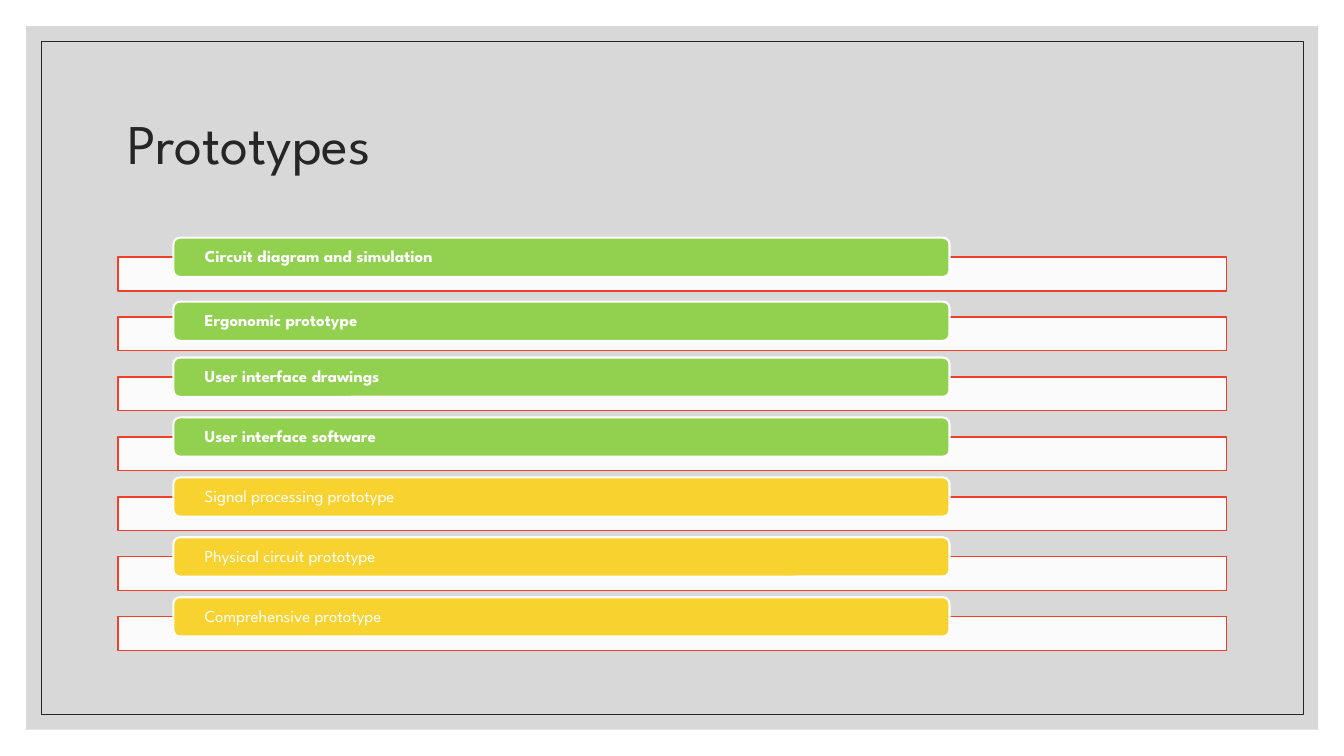
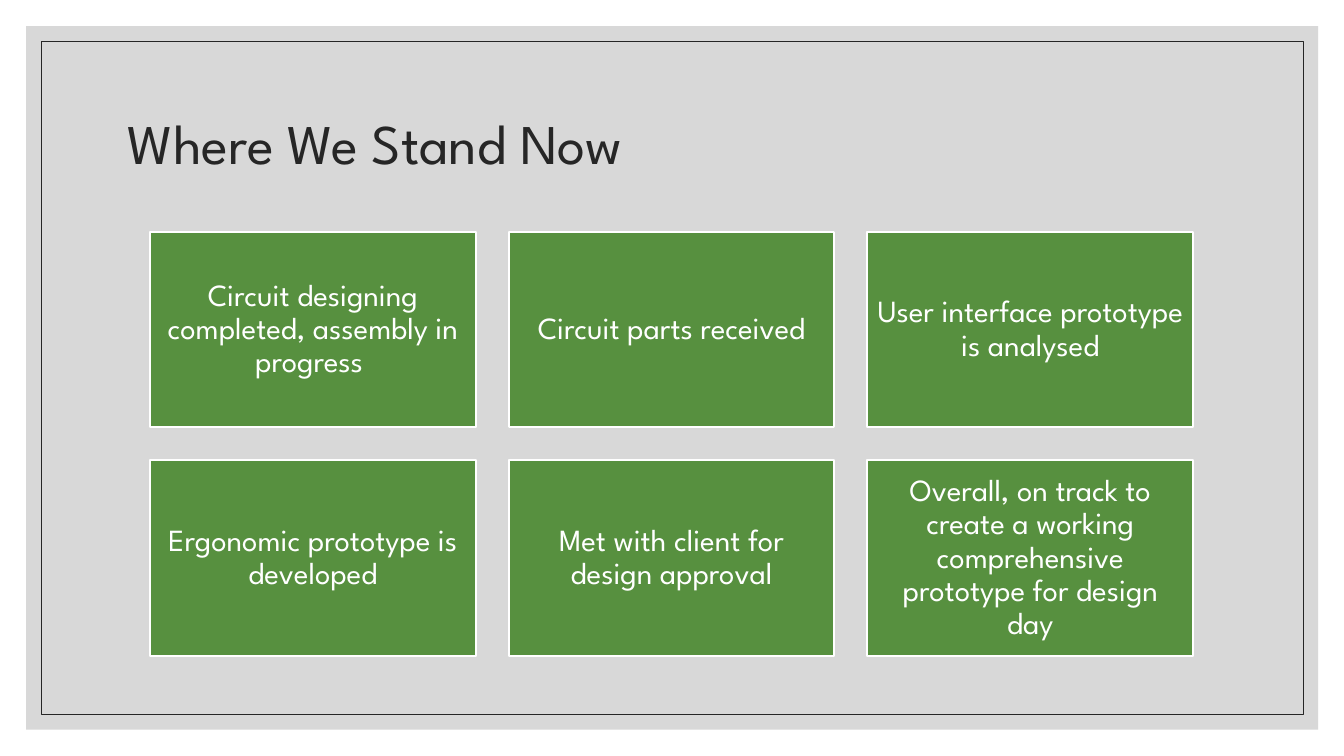
from dataclasses import dataclass

from lxml.etree import SubElement
from pptx import Presentation
from pptx.dml.color import RGBColor as RGB
from pptx.enum.shapes import MSO_SHAPE as Shape
from pptx.enum.text import MSO_ANCHOR as Anchor, PP_ALIGN as Align
from pptx.oxml.ns import qn
from pptx.util import Cm, Pt

STEPS = [
    ("Circuit diagram and simulation", True),
    ("Ergonomic prototype", True),
    ("User interface drawings", True),
    ("User interface software", True),
    ("Signal processing prototype", False),
    ("Physical circuit prototype", False),
    ("Comprehensive prototype", False),
]
NUDGE = {"Ergonomic prototype": 0.1}

TILES = [
    "Circuit designing completed, assembly in progress ",
    "Circuit parts received",
    "User interface prototype is analysed",
    "Ergonomic prototype is developed",
    "Met with client for design approval",
    "Overall, on track to create a working comprehensive prototype for design day",
]


@dataclass(frozen=True)
class Theme:
    font: str = "League Spartan"
    ink: str = "262626"
    white: str = "FFFFFF"
    panel: str = "BFBFBF"
    rail: str = "F03F2B"
    done: str = "92D050"
    todo: str = "F8D22F"
    tile: str = "57903F"
    title_size: int = 40
    step_size: int = 12
    tile_size: int = 22


T = Theme()


def assign(obj, **values):
    for name, value in values.items():
        setattr(obj, name, value)


def add_box(slide, area, fill=None, line=None, width=1, alpha=None,
            kind=Shape.RECTANGLE):
    """Draw a flat shape; area is in centimetres, alpha in percent."""
    box = slide.shapes.add_shape(kind, *map(Cm, area))
    box.shadow.inherit = False
    if fill:
        box.fill.solid()
        box.fill.fore_color.rgb = RGB.from_string(fill)
        if alpha:
            color = box.fill._xPr.find(".//" + qn("a:srgbClr"))
            SubElement(color, qn("a:alpha")).set("val", str(alpha * 1000))
    else:
        box.fill.background()
    if line:
        box.line.color.rgb = RGB.from_string(line)
        box.line.width = Pt(width)
    else:
        box.line.fill.background()
    return box


def write(box, text, size, color, align=Align.LEFT, bold=False, pad=(0.25, 0.13)):
    """Fill a box with one paragraph; pad is the side and top inset."""
    side, top = map(Cm, pad)
    frame = box.text_frame
    assign(frame, word_wrap=True, vertical_anchor=Anchor.MIDDLE,
           margin_left=side, margin_right=side,
           margin_top=top, margin_bottom=top)
    para = frame.paragraphs[0]
    assign(para, alignment=align, line_spacing=0.9)
    run = para.add_run()
    run.text = text
    assign(run.font, name=T.font, size=Pt(size), bold=bold)
    run.font.color.rgb = RGB.from_string(color)


def add_page(deck, title):
    slide = deck.slides.add_slide(deck.slide_layouts[6])
    add_box(slide, (0.66, 0.66, 32.56, 17.73), T.panel, alpha=60)
    add_box(slide, (1.04, 1.04, 31.8, 16.97), line=T.ink, width=0.5)
    head = slide.shapes.add_textbox(*map(Cm, (2.97, 1.78, 27.94, 3.81)))
    write(head, title, T.title_size, T.ink)
    return slide


def add_steps(slide):
    for row, (text, done) in enumerate(STEPS):
        top = 6.48 + row * 1.51
        add_box(slide, (2.97, top, 27.94, 0.85), T.white, T.rail, alpha=90)
        tab_top = top - 0.49 + NUDGE.get(text, 0)
        tab = add_box(slide, (4.37, tab_top, 19.56, 0.99),
                      T.done if done else T.todo, T.white, 1.5,
                      kind=Shape.ROUNDED_RECTANGLE)
        write(tab, text, T.step_size, T.white, bold=done, pad=(0.74, 0))


def add_tiles(slide, cols=3, wide=8.21, high=4.93, gap=0.83):
    for i, text in enumerate(TILES):
        row, col = divmod(i, cols)
        area = (3.78 + col * (wide + gap), 5.84 + row * (high + gap), wide, high)
        tile = add_box(slide, area, T.tile, T.white, 1.5)
        write(tile, text, T.tile_size, T.white, Align.CENTER, pad=(0.23, 0.23))


def main():
    deck = Presentation()
    assign(deck, slide_width=Cm(33.87), slide_height=Cm(19.05))
    add_steps(add_page(deck, "Prototypes"))
    add_tiles(add_page(deck, "Where We Stand Now"))
    deck.save("out.pptx")


if __name__ == "__main__":
    main()
